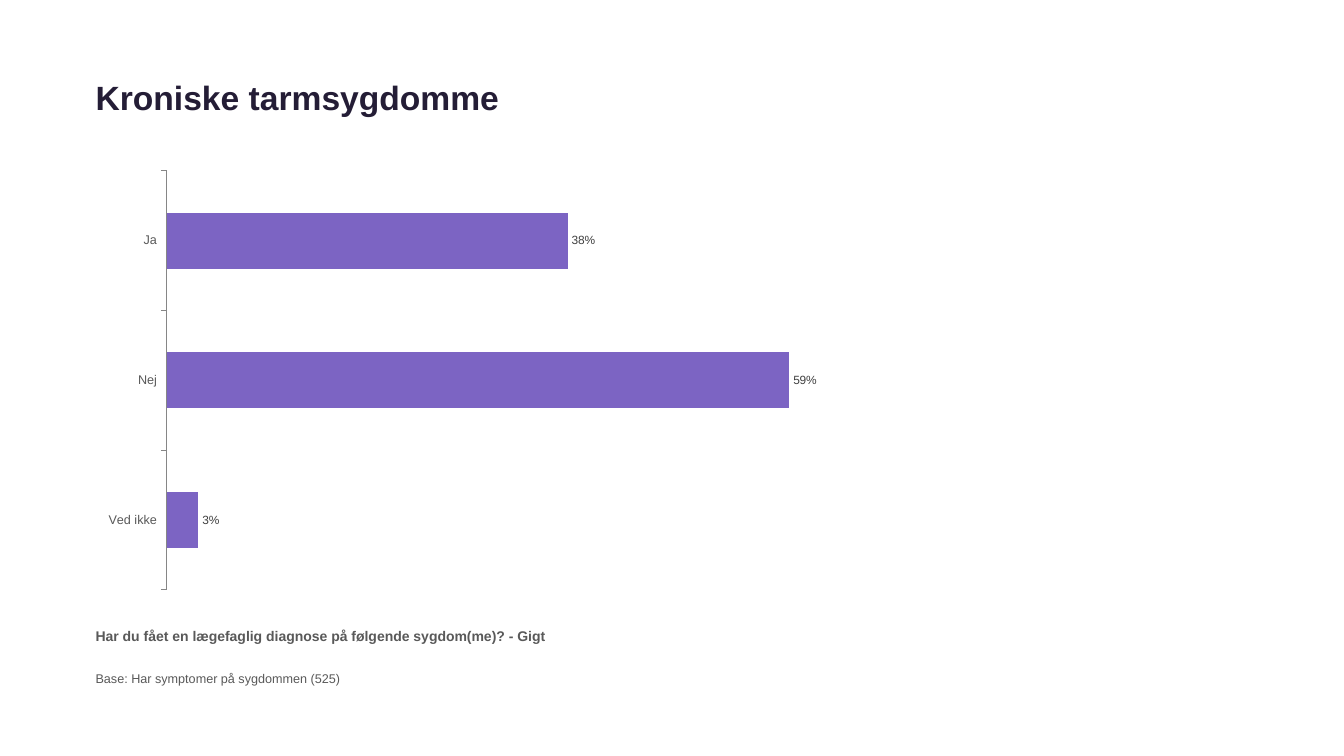
import pptx
import pptx.chart.data
import pptx.dml.color
import pptx.enum.chart
import pptx.enum.text
import pptx.util
from lxml import etree

Inches = pptx.util.Inches
Pt = pptx.util.Pt
RGBColor = pptx.dml.color.RGBColor
enums = pptx.enum.chart

NAVY = RGBColor(0x24, 0x1D, 0x36)
GREY = RGBColor(0x59, 0x59, 0x59)
DARK = RGBColor(0x40, 0x40, 0x40)
LINE = RGBColor(0x86, 0x86, 0x86)
PURPLE = RGBColor(0x7C, 0x64, 0xC3)
LEFT = Inches(0.85)


def style(font, size, color, bold=False):
    looks = {"name": "Arial", "size": Pt(size), "bold": bold}
    for key, value in looks.items():
        setattr(font, key, value)
    font.color.rgb = color


deck = pptx.Presentation()
deck.slide_width = Inches(13.33)
deck.slide_height = Inches(7.5)
slide = deck.slides.add_slide(deck.slide_layouts[6])

# Title, question and base
texts = [
    ("Kroniske tarmsygdomme", 0.71, 0.5, 24, NAVY, True),
    ("Har du fået en lægefaglig diagnose på følgende sygdom(me)? - Gigt",
     6.18, 0.43, 10, GREY, True),
    ("Base: Har symptomer på sygdommen (525)", 6.61, 0.28, 9, GREY, False),
]
for words, top, height, size, color, bold in texts:
    box = slide.shapes.add_textbox(LEFT, Inches(top), Inches(11.63), Inches(height))
    frame = box.text_frame
    frame.word_wrap = True
    frame.vertical_anchor = pptx.enum.text.MSO_ANCHOR.TOP
    run = frame.paragraphs[0].add_run()
    run.text = words
    style(run.font, size, color, bold)

# Answers as bars
data = pptx.chart.data.CategoryChartData(number_format="0%")
data.categories = ["Ved ikke", "Nej", "Ja"]
data.add_series("Series 1", [0.03, 0.59, 0.38])
chart = slide.shapes.add_chart(
    enums.XL_CHART_TYPE.BAR_CLUSTERED, LEFT, Inches(1.61), Inches(11.5), Inches(4.33), data
).chart
chart.has_legend = False
chart.has_title = False
chart.font.name = "Arial"
chart.font.size = Pt(18)

plot = chart.plots[0]
bars = {"gap_width": 150, "overlap": -10, "vary_by_categories": False, "has_data_labels": True}
for key, value in bars.items():
    setattr(plot, key, value)
fill = plot.series[0].format.fill
fill.solid()
fill.fore_color.rgb = PURPLE

labels = plot.data_labels
marks = {
    "show_value": True,
    "number_format": "0%",
    "number_format_is_linked": False,
    "position": enums.XL_LABEL_POSITION.OUTSIDE_END,
}
for key, value in marks.items():
    setattr(labels, key, value)
style(labels.font, 8.5, DARK)

names = chart.category_axis
names.has_major_gridlines = False
names.major_tick_mark = enums.XL_TICK_MARK.OUTSIDE
names.tick_label_position = enums.XL_TICK_LABEL_POSITION.LOW
names.format.line.color.rgb = LINE
names.format.line.width = Pt(0.75)
style(names.tick_labels.font, 9, GREY)

scale = chart.value_axis
limits = {
    "minimum_scale": 0,
    "maximum_scale": 1,
    "major_unit": 0.1,
    "has_major_gridlines": False,
    "visible": False,
}
for key, value in limits.items():
    setattr(scale, key, value)
scale.tick_labels.number_format = "0.00%"
scale.tick_labels.number_format_is_linked = False

# Fixed plot area, as shares of the chart frame
area = chart._chartSpace.chart.plotArea
ns = "{" + area.nsmap["c"] + "}"
for old in area.findall(ns + "layout"):
    area.remove(old)
layout = etree.Element(ns + "layout")
area.insert(0, layout)
manual = etree.SubElement(layout, ns + "manualLayout")
shares = {
    "layoutTarget": "inner", "xMode": "edge", "yMode": "edge",
    "x": 0.07, "y": 0.02, "w": 0.91, "h": 0.96,
}
for key, value in shares.items():
    etree.SubElement(manual, ns + key).set("val", str(value))

deck.save("out.pptx")
